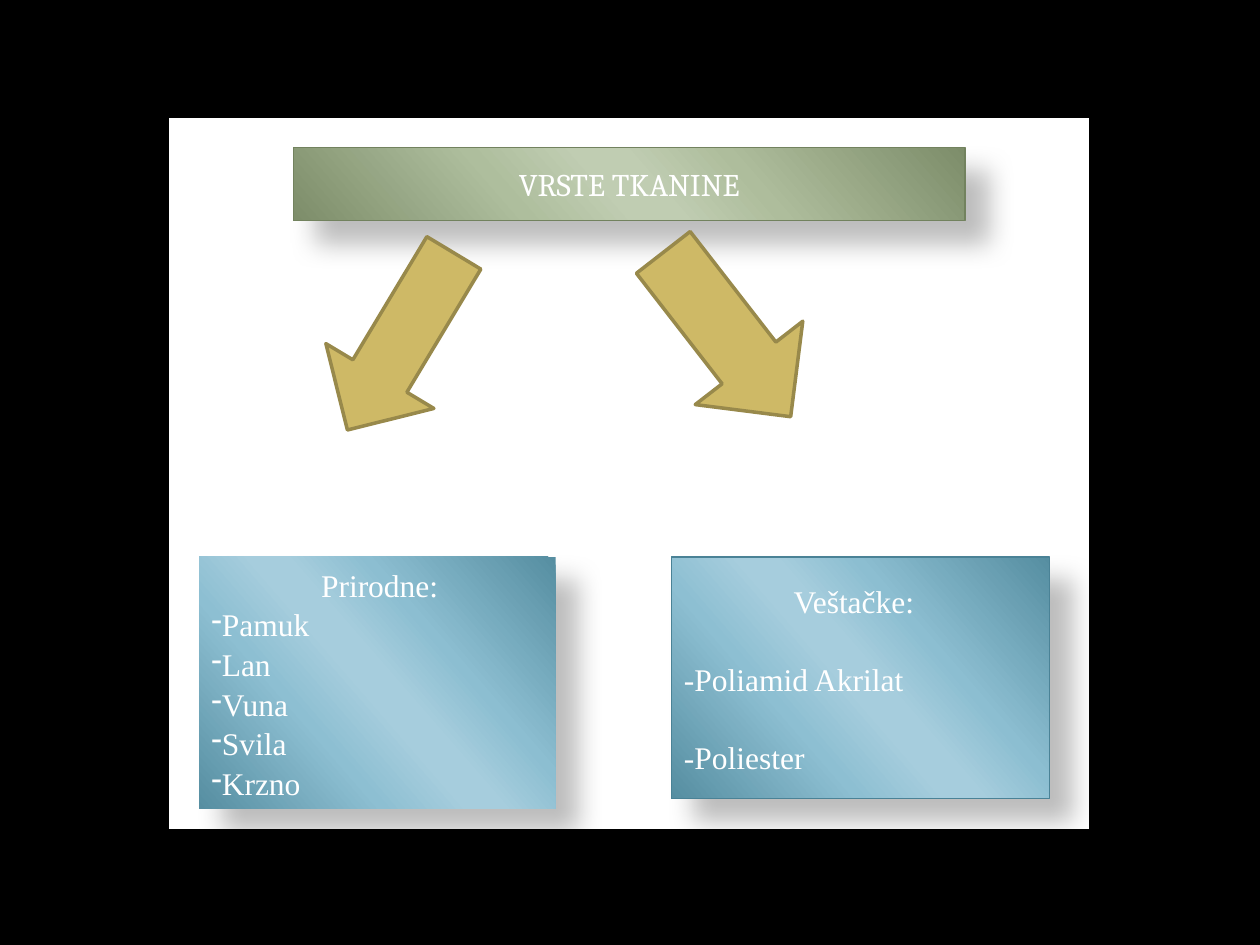
from lxml.etree import SubElement
from pptx import Presentation
from pptx.dml.color import RGBColor
from pptx.enum.shapes import MSO_SHAPE
from pptx.enum.text import MSO_ANCHOR, PP_ALIGN
from pptx.oxml.ns import qn
from pptx.util import Inches, Pt

STOPS = (0, 33, 47, 53, 68, 100)
GREEN = ("7D8D6A", "AEBD9C", "C0CDB2", "C0CDB2", "AEBE9D", "7D8D6A")
BLUE = ("568EA1", "8CBED1", "A6CDDD", "A6CDDD", "8DBFD2", "568EA1")
GRADIENT_ANGLE = 139
HEADING_INDENT = 0.87
LINE_GAP = Pt(21.7)


def color(value):
    """Turn a hex string into a colour."""
    return RGBColor.from_string(value)


def set_attributes(target, values):
    """Set each named attribute of the target."""
    for name, value in values.items():
        setattr(target, name, value)


def add_block(slide, kind, box, fill=None, line=None, width=0.75):
    """Add a preset shape with an optional solid fill and outline."""
    shape = slide.shapes.add_shape(kind, *(Inches(value) for value in box))
    shape.shadow.inherit = False
    if fill:
        shape.fill.solid()
        shape.fill.fore_color.rgb = color(fill)
    if line:
        shape.line.color.rgb = color(line)
        shape.line.width = Pt(width)
    else:
        shape.line.fill.background()
    return shape


def add_arrow(slide, box, rotation):
    """Add a rotated gold arrow."""
    arrow = add_block(slide, MSO_SHAPE.DOWN_ARROW, box, "CEB966", "98894B", 2)
    arrow.rotation = rotation


def add_color(parent, value):
    """Append a colour element to an XML parent."""
    return SubElement(parent, qn("a:srgbClr"), val=value)


def add_panel(slide, box, colors, line=None):
    """Add a rectangle with a gradient fill and a soft shadow."""
    panel = add_block(slide, MSO_SHAPE.RECTANGLE, box, line=line)
    panel.fill.gradient()
    panel.fill.gradient_angle = 360 - GRADIENT_ANGLE
    properties = panel.element.spPr
    stop_list = properties.find(".//" + qn("a:gsLst"))
    stop_list.clear()
    for position, value in zip(STOPS, colors):
        stop = SubElement(stop_list, qn("a:gs"), pos=str(position * 1000))
        add_color(stop, value)
    shadow = SubElement(
        properties.find(qn("a:effectLst")), qn("a:outerShdw"),
        blurRad=str(Pt(15)), dist=str(Pt(18)), dir=str(45 * 60000),
        algn="tl", rotWithShape="0")
    SubElement(add_color(shadow, "000000"), qn("a:alpha"), val="26000")
    set_attributes(panel.text_frame, {
        "word_wrap": True, "vertical_anchor": MSO_ANCHOR.MIDDLE})
    return panel


def write_paragraph(paragraph, text, font="Times New Roman", **formats):
    """Write white text into a paragraph with the given formats."""
    run = paragraph.add_run()
    run.text = text
    set_attributes(run.font, {"name": font, "size": Pt(18)})
    run.font.color.rgb = color("FFFFFF")
    set_attributes(paragraph, {"alignment": PP_ALIGN.LEFT, **formats})


def add_list(slide, box, heading, items, line=None, bullet=None, gap=Pt(0)):
    """Add a blue panel with an indented heading and its items."""
    frame = add_panel(slide, box, BLUE, line).text_frame
    title = frame.paragraphs[0]
    write_paragraph(title, heading, line_spacing=1.05)
    title._p.get_or_add_pPr().set("marL", str(Inches(HEADING_INDENT)))
    for item in items:
        paragraph = frame.add_paragraph()
        write_paragraph(paragraph, item, line_spacing=1.05, space_before=gap)
        if bullet:
            SubElement(paragraph._p.get_or_add_pPr(), qn("a:buChar"), char=bullet)


def main():
    """Build and save the slide."""
    presentation = Presentation()
    set_attributes(presentation, {
        "slide_width": Inches(10), "slide_height": Inches(7.5)})
    slide = presentation.slides.add_slide(presentation.slide_layouts[6])
    slide.background.fill.solid()
    slide.background.fill.fore_color.rgb = color("000000")

    add_block(slide, MSO_SHAPE.RECTANGLE, (1.33, 0.92, 7.33, 5.67),
              "FFFFFF", "000000", 2)
    banner = add_panel(slide, (2.33, 1.17, 5.33, 0.58), GREEN, "72825E")
    write_paragraph(banner.text_frame.paragraphs[0], "VRSTE TKANINE",
                    "Cambria", alignment=PP_ALIGN.CENTER)
    add_arrow(slide, (2.68, 1.89, 1, 1.64), 31)
    add_arrow(slide, (5.23, 1.83, 1.08, 1.65), 322.2)
    add_list(slide, (1.58, 4.42, 2.83, 2), "Prirodne:",
             ("Pamuk", "Lan", "Vuna", "Svila", "Krzno"), bullet="-")
    add_list(slide, (5.33, 4.42, 3, 1.92), "Veštačke:",
             ("-Poliamid Akrilat", "-Poliester"), "4A8296", gap=LINE_GAP)
    presentation.save("out.pptx")


if __name__ == "__main__":
    main()
